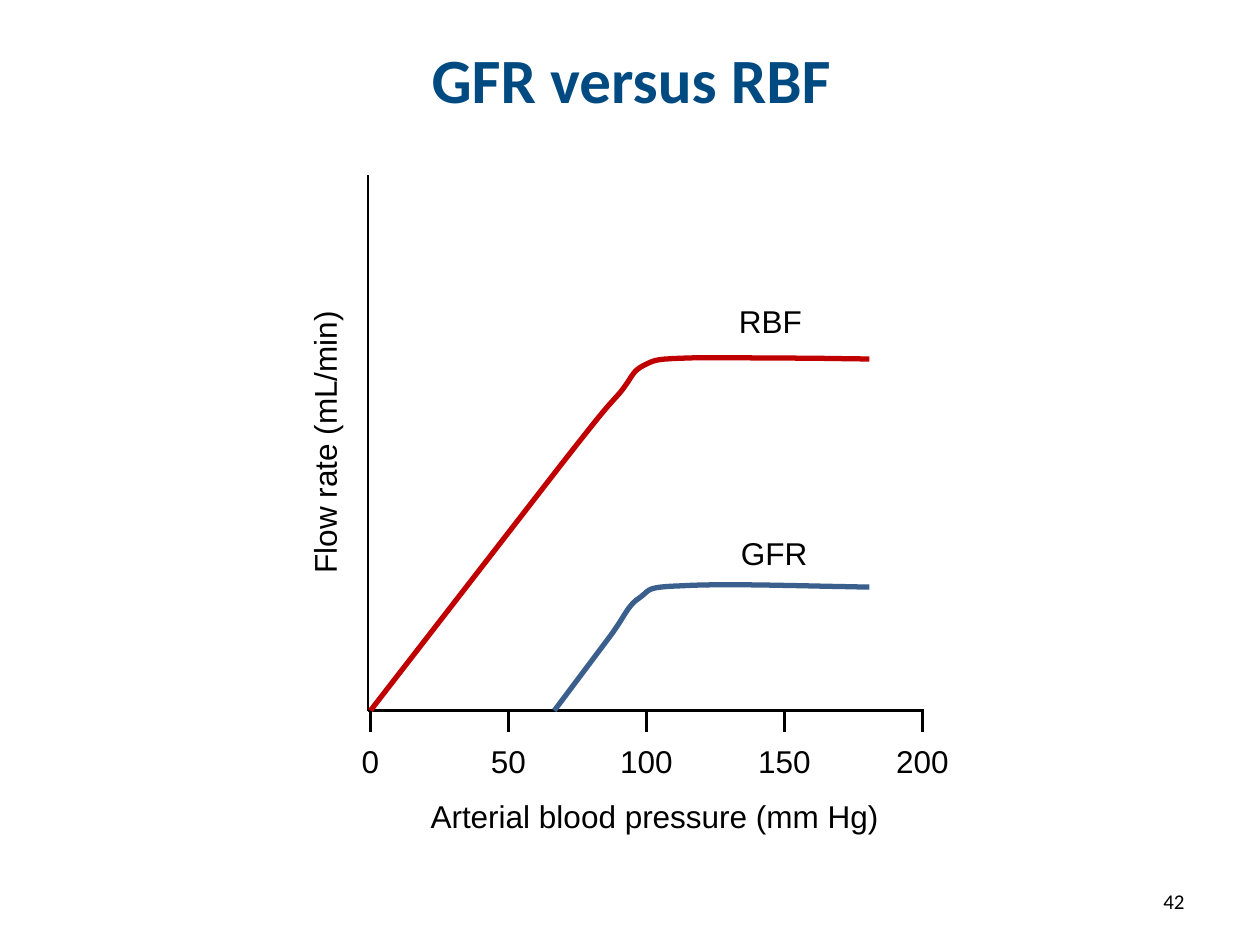
from dataclasses import dataclass

from lxml import etree
from pptx import Presentation
from pptx.dml.color import RGBColor
from pptx.enum.text import MSO_ANCHOR, MSO_AUTO_SIZE, PP_ALIGN
from pptx.oxml.ns import qn
from pptx.util import Inches, Pt

CENTER, RIGHT = PP_ALIGN.CENTER, PP_ALIGN.RIGHT
MIDDLE = MSO_ANCHOR.MIDDLE
FIT_SHAPE = MSO_AUTO_SIZE.SHAPE_TO_FIT_TEXT

BLACK = RGBColor(0x00, 0x00, 0x00)
NAVY = RGBColor(0x00, 0x4A, 0x82)
RED = RGBColor(0xC0, 0x00, 0x00)
BLUE = RGBColor(0x3A, 0x5F, 0x8C)

COLUMNS, ROWS = 100, 75
DECK_WIDTH, DECK_HEIGHT = Inches(10), Inches(7.5)
AXIS_LEFT, AXIS_TOP, AXIS_RIGHT, BASELINE = 29.2, 13.9, 73.3, 56.4
FIRST_TICK, TICK_STEP, TICK_LENGTH = 29.4, 10.95, 1.7
LABEL_HEIGHT = 4
CURVE_STEPS = 16

Point = tuple[float, float]
Bend = tuple[Point, Point, Point]


@dataclass
class Label:
    text: str
    center: Point
    width: float
    rotation: int = 0


@dataclass
class FlowCurve:
    color: RGBColor
    start: Point
    ramp_end: Point
    bends: list[Bend]


TICKS = [(str(50 * i), FIRST_TICK + TICK_STEP * i) for i in range(5)]
LABELS = [
    Label("Flow rate (mL/min)", (25.75, 35.1), 23.1, 270),
    Label("Arterial blood pressure (mm Hg)", (51.95, 64.8), 37.9),
    Label("RBF", (61.15, 25.5), 7.1),
    Label("GFR", (61.45, 43.9), 7.3),
]
LABELS += [Label(text, (x, 60.4), 2 + 1.4 * len(text)) for text, x in TICKS]
CURVES = [
    FlowCurve(RED, (29.4, 56.4), (44.6, 36.8), [
        ((47.9, 32.6), (48, 32.5), (49.1, 31.3)),
        ((50.2, 30), (50.1, 29.5), (51.1, 29)),
        ((52.1, 28.5), (52.1, 28.5), (55.1, 28.4)),
        ((58.1, 28.4), (63.5, 28.4), (69, 28.5)),
    ]),
    FlowCurve(BLUE, (44, 56.4), (48.5, 50.4), [
        ((49.6, 48.9), (49.8, 48.1), (50.7, 47.5)),
        ((51.7, 46.8), (51.1, 46.6), (54.1, 46.5)),
        ((57.2, 46.3), (63.1, 46.5), (69, 46.6)),
    ]),
]


def across(columns: float) -> int:
    return round(DECK_WIDTH * columns / COLUMNS)


def down(rows: float) -> int:
    return round(DECK_HEIGHT * rows / ROWS)


def place(box, left: float, top: float, width: float, height: float) -> None:
    box.left, box.top = across(left), down(top)
    box.width, box.height = across(width), down(height)


def write(box, text: str, font: str, size: int, color: RGBColor = BLACK,
          align: PP_ALIGN = CENTER, bold: bool = False) -> None:
    para = box.text_frame.paragraphs[0]
    para.alignment = align
    span = para.add_run()
    span.text = text
    span.font.name = font
    span.font.size = Pt(size)
    span.font.bold = bold
    span.font.color.rgb = color


def draw_label(page, label: Label) -> None:
    x, y = label.center
    box = page.shapes.add_textbox(0, 0, 0, 0)
    place(box, x - label.width / 2, y - LABEL_HEIGHT / 2, label.width, LABEL_HEIGHT)
    box.rotation = label.rotation
    box.text_frame.word_wrap = False
    box.text_frame.auto_size = FIT_SHAPE
    write(box, label.text, "Arial", 18)


def draw_line(page, start: Point, end: Point) -> None:
    line = page.shapes.add_connector(
        1, across(start[0]), down(start[1]), across(end[0]), down(end[1]))
    line.line.color.rgb = BLACK
    line.line.width = Pt(1.5)
    etree.SubElement(line._element.spPr, qn("a:effectLst"))


def bend_points(start: Point, bend: Bend) -> list[Point]:
    points = []
    for step in range(1, CURVE_STEPS + 1):
        t = step / CURVE_STEPS
        weights = ((1 - t) ** 3, 3 * t * (1 - t) ** 2, 3 * t * t * (1 - t), t ** 3)
        corners = (start, *bend)
        points.append((sum(w * x for w, (x, _) in zip(weights, corners)),
                       sum(w * y for w, (_, y) in zip(weights, corners))))
    return points


def draw_curve(page, curve: FlowCurve) -> None:
    points = [curve.ramp_end]
    for bend in curve.bends:
        points += bend_points(points[-1], bend)
    x, y = curve.start
    builder = page.shapes.build_freeform(across(x), down(y))
    builder.add_line_segments([(across(x), down(y)) for x, y in points], close=False)
    shape = builder.convert_to_shape()
    shape.shadow.inherit = False
    shape.fill.background()
    shape.line.color.rgb = curve.color
    shape.line.width = Pt(3)


def main() -> None:
    deck = Presentation()
    deck.slide_width, deck.slide_height = DECK_WIDTH, DECK_HEIGHT
    page = deck.slides.add_slide(deck.slide_layouts[5])

    title = page.shapes.title
    place(title, 5.1, 1.3, 90, 9.9)
    title.text_frame.vertical_anchor = MIDDLE
    write(title, "GFR versus RBF", "Calibri", 36, NAVY, bold=True)

    number = page.shapes.add_textbox(0, 0, 0, 0)
    place(number, 71.7, 69.5, 23.3, 4)
    number.text_frame.word_wrap = True
    number.text_frame.vertical_anchor = MIDDLE
    write(number, "42", "Calibri", 12, align=RIGHT)

    draw_line(page, (AXIS_LEFT, AXIS_TOP), (AXIS_LEFT, BASELINE))
    draw_line(page, (AXIS_LEFT, BASELINE), (AXIS_RIGHT, BASELINE))
    for curve in CURVES:
        draw_curve(page, curve)
    for _, x in TICKS:
        draw_line(page, (x, BASELINE), (x, BASELINE + TICK_LENGTH))
    for label in LABELS:
        draw_label(page, label)

    deck.save("out.pptx")


if __name__ == "__main__":
    main()
